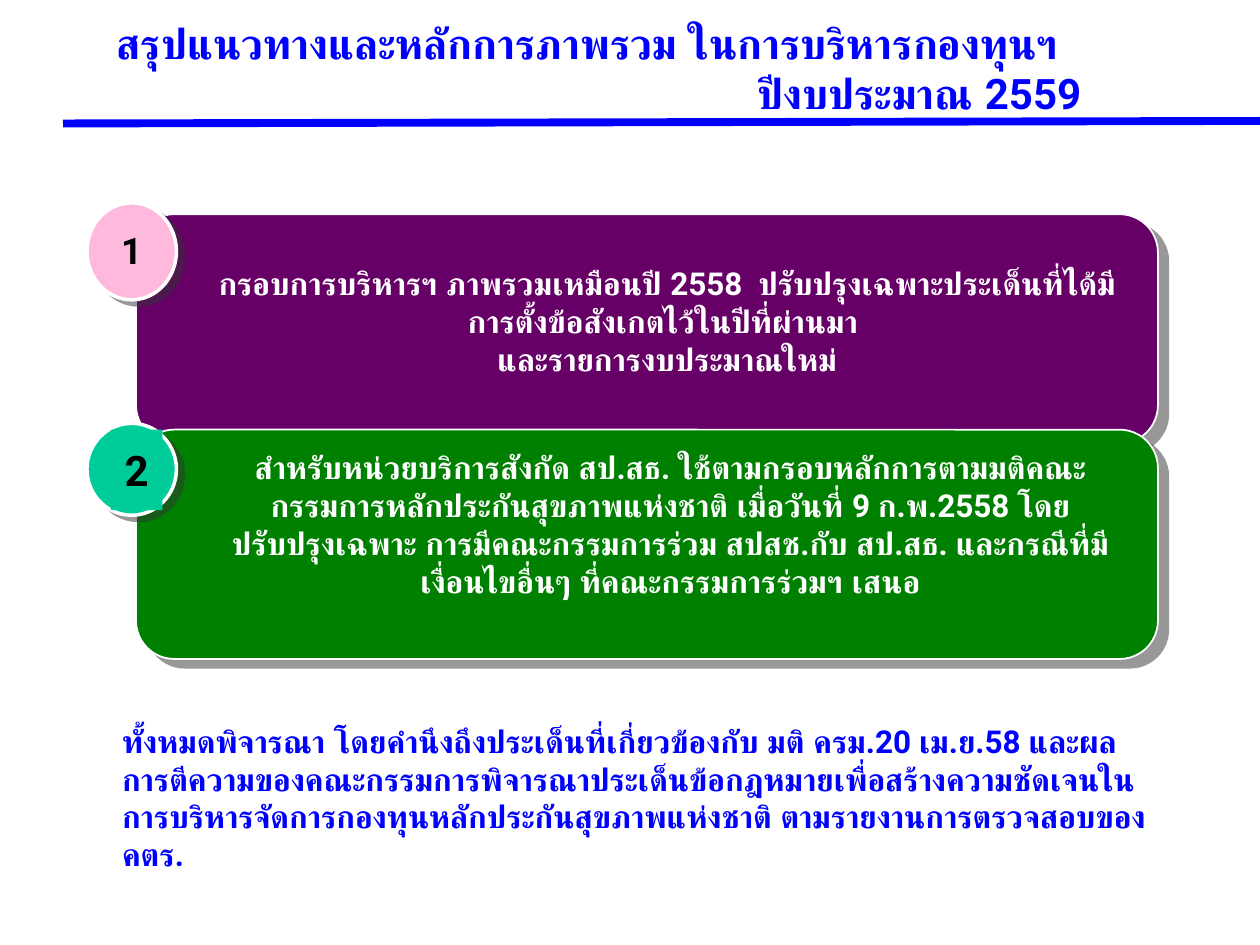
from lxml.etree import SubElement
from pptx import Presentation
from pptx.dml.color import RGBColor
from pptx.enum.shapes import MSO_CONNECTOR, MSO_SHAPE
from pptx.enum.text import MSO_ANCHOR, MSO_AUTO_SIZE, PP_ALIGN
from pptx.oxml.ns import qn
from pptx.util import Inches, Pt

COLORS = {
    "blue": "0000FF",
    "white": "FFFFFF",
    "black": "000000",
    "purple": "660066",
    "pink": "FFB9DC",
    "green": "008000",
    "teal": "00CC99",
    "shadow": "333333",
}


class SlideBuilder:
    font_name = "Roboto"

    def __init__(self, slide):
        self.slide = slide

    def color(self, name):
        return RGBColor.from_string(COLORS[name])

    def group(self):
        return self.slide.shapes.add_group_shape().shapes

    def rule(self, start, end, color, width):
        connector = self.slide.shapes.add_connector(
            MSO_CONNECTOR.STRAIGHT, *map(Inches, start + end))
        connector.line.color.rgb = self.color(color)
        connector.line.width = Pt(width)
        SubElement(connector._element.spPr, qn("a:effectLst"))

    def shape(self, shapes, kind, box, fill, line_width=0):
        shape = shapes.add_shape(kind, *map(Inches, box))
        shape.shadow.inherit = False
        shape.fill.solid()
        shape.fill.fore_color.rgb = self.color(fill)
        if line_width:
            shape.line.color.rgb = self.color("white")
            shape.line.width = Pt(line_width)
        else:
            shape.line.fill.background()
        return shape

    def shadow(self, shape, distance, angle):
        effects = shape._element.spPr.find(qn("a:effectLst"))
        shadow = SubElement(effects, qn("a:outerShdw"), dist=str(Pt(distance)),
                            dir=str(angle * 60000), algn="ctr", rotWithShape="0")
        color = SubElement(shadow, qn("a:srgbClr"), val=COLORS["shadow"])
        SubElement(color, qn("a:alpha"), val="50000")

    def text(self, shape, lines, size, color, align, anchor=MSO_ANCHOR.MIDDLE,
             wrap=True, grow=True, space_before=0):
        frame = shape.text_frame
        frame.word_wrap = wrap
        frame.vertical_anchor = anchor
        frame.auto_size = MSO_AUTO_SIZE.SHAPE_TO_FIT_TEXT if grow else MSO_AUTO_SIZE.NONE
        for index, line in enumerate(lines):
            paragraph = frame.add_paragraph() if index else frame.paragraphs[0]
            paragraph.text = line
            paragraph.alignment = align
            paragraph.space_before = Pt(space_before)
            font = paragraph.font
            font.name = self.font_name
            font.size = Pt(size)
            font.bold = True
            font.color.rgb = self.color(color)

    def text_box(self, box, lines, size, color, align, **options):
        shape = self.slide.shapes.add_textbox(*map(Inches, box))
        self.text(shape, lines, size, color, align, **options)

    def card(self, top, fill, badge_fill, badge_box, text_box, lines, anchor,
             number, number_box, number_size):
        shapes = self.group()
        panel = self.shape(shapes, MSO_SHAPE.ROUNDED_RECTANGLE,
                           (1.08, top, 8.11, 1.82), fill, 1)
        self.shadow(panel, 7.8, 40)
        badge = self.shape(shapes, MSO_SHAPE.OVAL, badge_box, badge_fill, 2)
        self.shadow(badge, 5, 37)
        body = self.shape(shapes, MSO_SHAPE.RECTANGLE, text_box, fill)
        self.text(body, lines, 18, "white", PP_ALIGN.CENTER, anchor)
        label = self.shape(shapes, MSO_SHAPE.RECTANGLE, number_box, badge_fill)
        self.text(label, [number], number_size, "black", PP_ALIGN.CENTER, wrap=False)


def main():
    presentation = Presentation()
    presentation.slide_width = Inches(10)
    presentation.slide_height = Inches(7.5)
    builder = SlideBuilder(presentation.slides.add_slide(presentation.slide_layouts[6]))

    builder.rule((0.5, 0.98), (10, 0.96), "blue", 4.5)
    builder.text_box(
        (0, 0.24, 8.68, 0.59),
        ["สรุปแนวทางและหลักการภาพรวม ในการบริหารกองทุนฯ  \vปีงบประมาณ 2559"],
        24, "blue", PP_ALIGN.RIGHT, grow=False)
    builder.card(
        1.7, "purple", "pink", (0.69, 1.61, 0.71, 0.77), (1.61, 1.91, 7.37, 1.27),
        ["กรอบการบริหารฯ ภาพรวมเหมือนปี 2558  ปรับปรุงเฉพาะประเด็นที่ได้มี"
         "การตั้งข้อสังเกตไว้ในปีที่ผ่านมา ",
         "และรายการงบประมาณใหม่"],
        MSO_ANCHOR.MIDDLE, "1", (0.85, 1.7, 0.39, 0.57), 21)
    builder.card(
        3.41, "green", "teal", (0.69, 3.36, 0.71, 0.73), (1.66, 3.51, 7.32, 1.66),
        ["สำหรับหน่วยบริการสังกัด สป.สธ. ใช้ตามกรอบหลักการตามมติคณะ"
         "กรรมการหลักประกันสุขภาพแห่งชาติ เมื่อวันที่ 9 ก.พ.2558 โดย"
         "ปรับปรุงเฉพาะ การมีคณะกรรมการร่วม สปสช.กับ สป.สธ. และกรณีที่มี"
         "เงื่อนไขอื่นๆ ที่คณะกรรมการร่วมฯ เสนอ"],
        MSO_ANCHOR.TOP, "2", (0.88, 3.41, 0.41, 0.64), 24)
    builder.text_box(
        (0.87, 5.68, 8.32, 1.31),
        ["ทั้งหมดพิจารณา โดยคำนึงถึงประเด็นที่เกี่ยวข้องกับ มติ ครม.20 เม.ย.58 และผล"
         "การตีความของคณะกรรมการพิจารณาประเด็นข้อกฎหมายเพื่อสร้างความชัดเจนใน"
         "การบริหารจัดการกองทุนหลักประกันสุขภาพแห่งชาติ ตามรายงานการตรวจสอบ"
         "ของ คตร."],
        18, "blue", PP_ALIGN.LEFT, anchor=MSO_ANCHOR.TOP, space_before=9)

    presentation.save("out.pptx")


if __name__ == "__main__":
    main()
